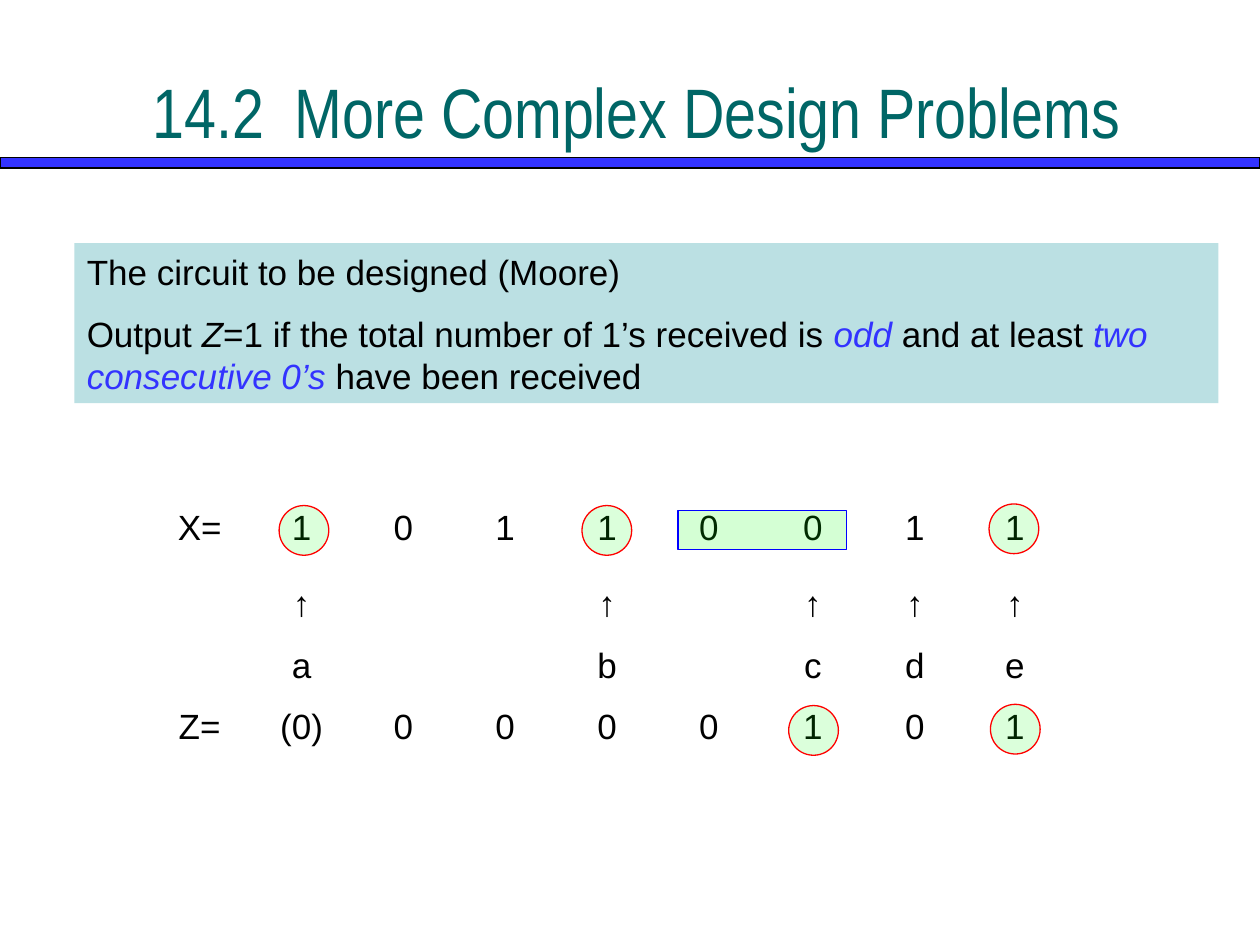
"""Build the slide on a Moore circuit with its input and output sequences."""
from lxml import etree
from pptx import Presentation
from pptx.dml.color import RGBColor
from pptx.enum.shapes import MSO_SHAPE
from pptx.enum.text import MSO_ANCHOR, PP_ALIGN
from pptx.oxml.ns import qn
from pptx.util import Pt

RECT, OVAL = MSO_SHAPE.RECTANGLE, MSO_SHAPE.OVAL
LEFT, CENTER = PP_ALIGN.LEFT, PP_ALIGN.CENTER
MIDDLE = MSO_ANCHOR.MIDDLE

TITLE = "14.2\t More Complex Design Problems"
BODY = {"name": "Arial", "size": Pt(20), "bold": False}
HEADING = {"name": "Arial Narrow", "size": Pt(40), "bold": False}
BLACK, BLUE, TEAL = "000000", "3333FF", "006666"
PLAIN, VARIABLE, KEY = (BLACK, False), (BLACK, True), (BLUE, True)

STATEMENT = [
    [("The circuit to be designed (Moore)", PLAIN)],
    [("Output ", PLAIN), ("Z", VARIABLE),
     ("=1 if the total number of 1’s received is ", PLAIN), ("odd", KEY),
     (" and at least ", PLAIN), ("two consecutive 0’s", KEY),
     (" have been received", PLAIN)],
]
SEQUENCES = [
    ["X=", "1", "0", "1", "1", "0", "0", "1", "1"],
    ["", "↑", "", "", "↑", "", "↑", "↑", "↑"],
    ["", "a", "", "", "b", "", "c", "d", "e"],
    ["Z=", "(0)", "0", "0", "0", "0", "1", "0", "1"],
]
COL_WIDTHS = [58.2] * 6 + [60.5, 56.2, 58.2]
ROW_HEIGHTS = [43.2, 35.3, 35.3, 36.7]
DIAMETER = 28.4
RING_STYLE = ("00FF00", "FF0000", 14)
PAIR_STYLE = ("00FF00", "0000FF", 17)
PAIR = (387.4, 291.6, 96.5, 22.3)
RINGS = [(159.5, 288.9), (332.6, 288.9), (450.7, 403.2),
         (566, 402.5), (565.2, 288)]


def rgb(value):
    return RGBColor.from_string(value)


def add_run(p, text, font, color, italic=False):
    r = p.add_run()
    r.text = text
    for key, value in {**font, "italic": italic}.items():
        setattr(r.font, key, value)
    r.font.color.rgb = rgb(color)


def add_box(s, kind, box, fill, line=None, opacity=100):
    sp = s.shapes.add_shape(kind, *map(Pt, box))
    sp.shadow.inherit = False
    sp.fill.solid()
    sp.fill.fore_color.rgb = rgb(fill)
    if opacity < 100:
        color = sp.fill._xPr.find(qn("a:solidFill"))[0]
        etree.SubElement(color, qn("a:alpha"), val=str(opacity * 1000))
    if line:
        sp.line.color.rgb = rgb(line)
        sp.line.width = Pt(0.75)
    else:
        sp.line.fill.background()
    return sp


def add_title(s):
    sp = s.shapes.title
    frame = {"left": 21.6, "top": 18, "width": 684, "height": 90}
    for key, value in frame.items():
        setattr(sp, key, Pt(value))
    sp.text_frame.vertical_anchor = MIDDLE
    p = sp.text_frame.paragraphs[0]
    p.alignment = CENTER
    add_run(p, TITLE, HEADING, TEAL)


def add_sequences(s):
    size = sum(COL_WIDTHS), sum(ROW_HEIGHTS)
    table = s.shapes.add_table(len(ROW_HEIGHTS), len(COL_WIDTHS),
                               Pt(85), Pt(287.3), *map(Pt, size)).table
    table.first_row = table.horz_banding = False
    for column, width in zip(table.columns, COL_WIDTHS):
        column.width = Pt(width)
    for row, height, values in zip(table.rows, ROW_HEIGHTS, SEQUENCES):
        row.height = Pt(height)
        for cell, value in zip(row.cells, values):
            cell.fill.background()
            p = cell.text_frame.paragraphs[0]
            p.alignment = CENTER
            if value:
                add_run(p, value, BODY, BLACK)


def add_statement(s):
    tf = add_box(s, RECT, (42.5, 139, 653.8, 91.4), "BBE0E3").text_frame
    tf.word_wrap = True
    for i, parts in enumerate(STATEMENT):
        p = tf.add_paragraph() if i else tf.paragraphs[0]
        p.alignment = LEFT
        p.space_before = Pt(11.5 if i else 0)
        for text, (color, italic) in parts:
            add_run(p, text, BODY, color, italic)


def main():
    prs = Presentation()
    prs.slide_width, prs.slide_height = Pt(720), Pt(540)
    s = prs.slides.add_slide(prs.slide_layouts[5])
    add_title(s)
    add_box(s, RECT, (0, 90, 720, 6), BLUE, BLACK)
    add_sequences(s)
    add_statement(s)
    add_box(s, RECT, PAIR, *PAIR_STYLE)
    for left, top in RINGS:
        add_box(s, OVAL, (left, top, DIAMETER, DIAMETER), *RING_STYLE)
    prs.save("out.pptx")


if __name__ == "__main__":
    main()
